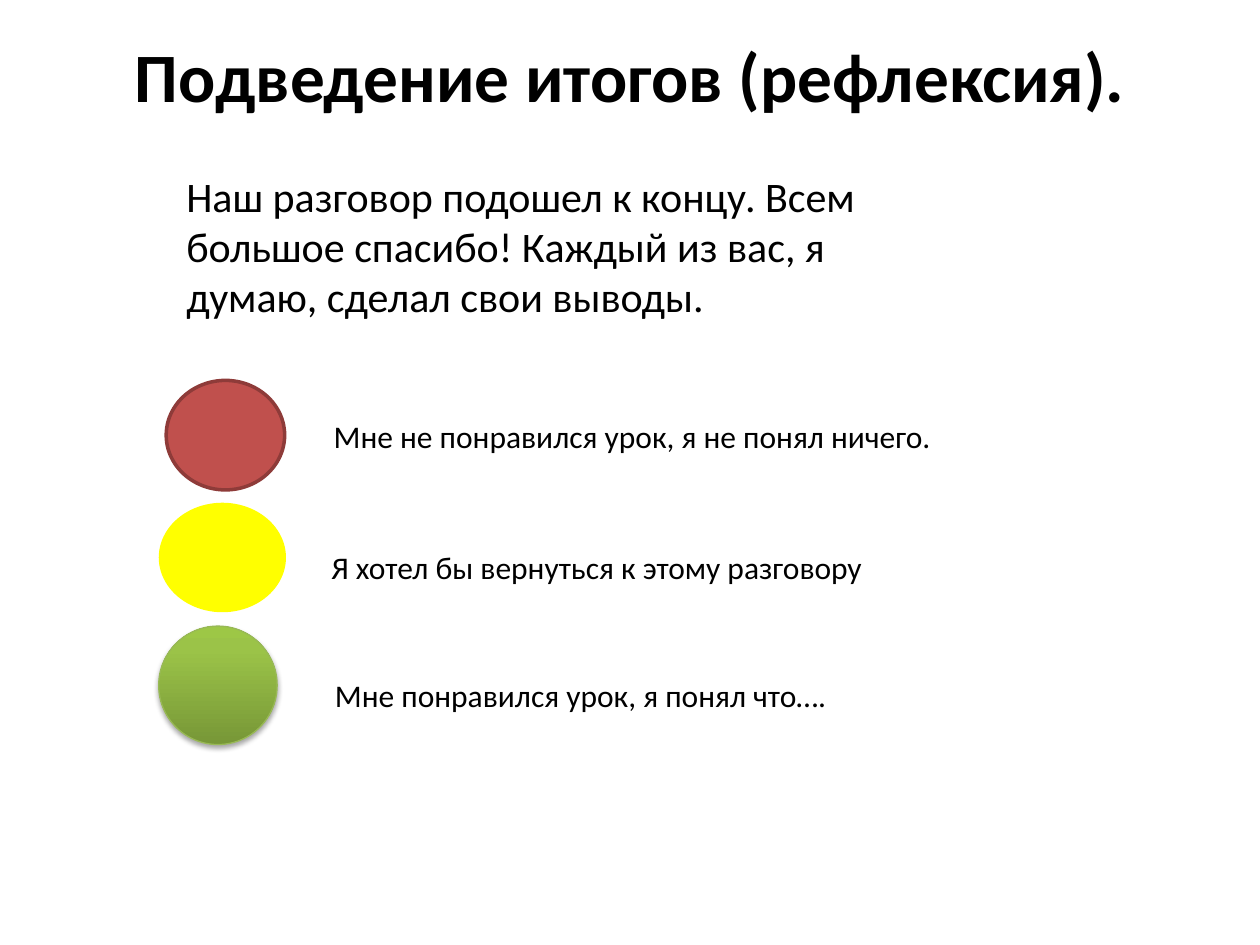
from copy import deepcopy

from lxml import etree
from pptx import Presentation
from pptx.dml.color import RGBColor
from pptx.enum.shapes import MSO_SHAPE
from pptx.enum.text import PP_ALIGN
from pptx.oxml.ns import qn
from pptx.util import Pt

OVAL = MSO_SHAPE.OVAL
LEFT, CENTER = PP_ALIGN.LEFT, PP_ALIGN.CENTER
FONT = "Calibri"


def rgb(value):
    """Turn a hex string into a colour."""
    return RGBColor.from_string(value)


def add_text(slide, text, left, top, width, height, size=18, bold=False,
             align=LEFT, margin_top=3.6):
    """Add a wrapping text box with one formatted paragraph."""
    box = slide.shapes.add_textbox(Pt(left), Pt(top), Pt(width), Pt(height))
    frame = box.text_frame
    frame.word_wrap = True
    frame.margin_top = Pt(margin_top)
    paragraph = frame.paragraphs[0]
    paragraph.text = text
    paragraph.alignment = align
    font = paragraph.font
    font.name, font.size, font.bold = FONT, Pt(size), bold
    font.color.rgb = rgb("000000")


def add_light(slide, left, top, width, height, fill, line=None, line_width=0):
    """Add one oval of the traffic light."""
    light = slide.shapes.add_shape(OVAL, Pt(left), Pt(top), Pt(width), Pt(height))
    light.shadow.inherit = False
    light.fill.solid()
    light.fill.fore_color.rgb = rgb(fill)
    if line:
        light.line.color.rgb = rgb(line)
        light.line.width = Pt(line_width)
    else:
        light.line.fill.background()
    return light


def set_gradient(shape, stops, angle):
    """Fill a shape with a three-stop linear gradient."""
    shape.fill.gradient()
    shape.fill.gradient_angle = angle
    stop_list = shape.element.spPr.find(".//" + qn("a:gsLst"))
    stop_list.append(deepcopy(stop_list[-1]))
    for stop, (position, color) in zip(shape.fill.gradient_stops, stops):
        stop.position = position
        stop.color.rgb = rgb(color)


def set_shadow(shape, color, opacity, blur, distance):
    """Give a shape a soft shadow that falls straight down."""
    effects = shape.element.spPr.find(qn("a:effectLst"))
    shadow = etree.SubElement(
        effects, qn("a:outerShdw"), blurRad=str(Pt(blur)), dist=str(Pt(distance)),
        dir=str(90 * 60000), rotWithShape="0")
    shade = etree.SubElement(shadow, qn("a:srgbClr"), val=color)
    etree.SubElement(shade, qn("a:alpha"), val=str(opacity * 1000))


def main():
    """Build the reflection slide."""
    presentation = Presentation()
    presentation.slide_width, presentation.slide_height = Pt(720), Pt(540)
    slide = presentation.slides.add_slide(presentation.slide_layouts[6])

    add_text(slide, "Подведение итогов (рефлексия).", 36, 19, 648, 90,
             size=39.6, bold=True, align=CENTER, margin_top=0)
    add_text(slide, "Наш разговор подошел к концу. Всем большое спасибо! "
             "Каждый из вас, я думаю, сделал свои выводы.",
             99.4, 93.6, 450.7, 123.8, size=24)

    add_light(slide, 95, 217.4, 67.7, 62.6, "C0504D", "8E3B39", 2)
    add_light(slide, 90.7, 287.3, 72.7, 62.6, "FFFF00")
    green = add_light(slide, 90.7, 357.8, 67.7, 67.7, "9BC348", "98B955", 0.75)
    set_gradient(green, [(0, "779737"), (0.8, "9BC348"), (1, "9DC746")], 90)
    set_shadow(green, "000000", 35, 3.1, 1.8)

    answers = [
        ("Мне не понравился урок, я не понял ничего.", 183.6, 234.7, 442.8),
        ("Я хотел бы вернуться к этому разговору", 182.2, 309.6, 334.8),
        ("Мне понравился урок, я понял что….", 184.3, 383, 334.8),
    ]
    for answer, left, top, width in answers:
        add_text(slide, answer, left, top, width, 28.8)

    presentation.save("out.pptx")


if __name__ == "__main__":
    main()
